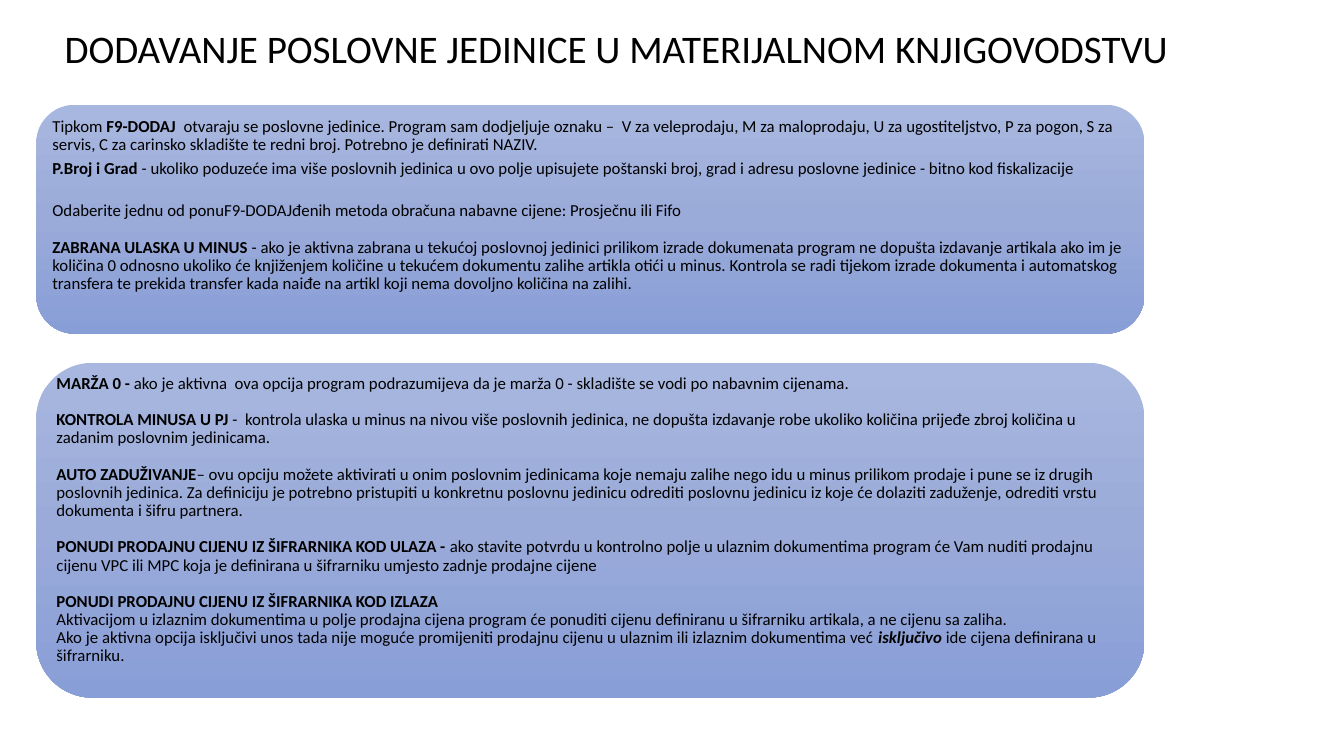
from copy import deepcopy
from dataclasses import dataclass

from pptx import Presentation
from pptx.dml.color import RGBColor
from pptx.enum.shapes import MSO_SHAPE as Shape
from pptx.enum.text import MSO_ANCHOR as Anchor, PP_ALIGN as Align
from pptx.oxml.ns import qn
from pptx.util import Inches, Pt

COLORS = {"text": "000000", "top": "A8B7DF", "middle": "9AABD9", "bottom": "889ED7"}
FONT = "Calibri"
TITLE = "DODAVANJE POSLOVNE JEDINICE U MATERIJALNOM KNJIGOVODSTVU"
PANEL_LEFT, PANEL_WIDTH = 0.36, 10.99
SMALL_GAP, LINE_GAP, WIDE_GAP = 4.2, 13, 17.2


@dataclass
class Run:
    text: str
    bold: bool = False
    italic: bool = False


@dataclass
class Entry:
    runs: list[Run]
    gap: float = 0


@dataclass
class Panel:
    top: float
    height: float
    text_box: tuple[float, float, float, float]
    inset: float
    entries: list[Entry]


def labelled(label: str, text: str, gap: float = 0) -> Entry:
    """Make an entry that opens with a bold label."""
    return Entry([Run(label, bold=True), Run(text)], gap)


PANELS = [
    Panel(1.04, 2.27, (0.47, 1.15, 10.76, 2.05), 0.05, [
        Entry([
            Run("Tipkom "),
            Run("F9-DODAJ ", bold=True),
            Run(" otvaraju se poslovne jedinice. Program sam dodjeljuje oznaku –  V za veleprodaju, "
                "M za maloprodaju, U za ugostiteljstvo, P za pogon, S za servis, C za carinsko "
                "skladište te redni broj. Potrebno je definirati NAZIV."),
        ]),
        labelled("P.Broj i Grad",
                 " - ukoliko poduzeće ima više poslovnih jedinica u ovo polje upisujete poštanski "
                 "broj, grad i adresu poslovne jedinice - bitno kod fiskalizacije", SMALL_GAP),
        Entry([Run("Odaberite jednu od ponuF9-DODAJđenih metoda obračuna nabavne cijene: "
                   "Prosječnu ili Fifo")], WIDE_GAP),
        labelled("ZABRANA ULASKA U MINUS",
                 " - ako je aktivna zabrana u tekućoj poslovnoj jedinici prilikom izrade dokumenata "
                 "program ne dopušta izdavanje artikala ako im je količina 0 odnosno ukoliko će "
                 "knjiženjem količine u tekućem dokumentu zalihe artikla otići u minus. Kontrola se "
                 "radi tijekom izrade dokumenta i automatskog transfera te prekida transfer kada "
                 "naiđe na artikl koji nema dovoljno količina na zalihi.", LINE_GAP),
    ]),
    Panel(3.6, 3.32, (0.52, 3.7, 10.66, 3.05), 0.04, [
        labelled("MARŽA 0 - ",
                 "ako je aktivna  ova opcija program podrazumijeva da je marža 0 - skladište se vodi "
                 "po nabavnim cijenama."),
        labelled("KONTROLA MINUSA U PJ",
                 " -  kontrola ulaska u minus na nivou više poslovnih jedinica, ne dopušta izdavanje "
                 "robe ukoliko količina prijeđe zbroj količina u zadanim poslovnim jedinicama.",
                 LINE_GAP),
        labelled("AUTO ZADUŽIVANJE",
                 "– ovu opciju možete aktivirati u onim poslovnim jedinicama koje nemaju zalihe nego "
                 "idu u minus prilikom prodaje i pune se iz drugih poslovnih jedinica. Za definiciju "
                 "je potrebno pristupiti u konkretnu poslovnu jedinicu odrediti poslovnu jedinicu iz "
                 "koje će dolaziti zaduženje, odrediti vrstu dokumenta i šifru partnera.", LINE_GAP),
        labelled("PONUDI PRODAJNU CIJENU IZ ŠIFRARNIKA KOD ULAZA - ",
                 "ako stavite potvrdu u kontrolno polje u ulaznim dokumentima program će Vam nuditi "
                 "prodajnu cijenu VPC ili MPC koja je definirana u šifrarniku umjesto zadnje "
                 "prodajne cijene", LINE_GAP),
        Entry([Run("PONUDI PRODAJNU CIJENU IZ ŠIFRARNIKA KOD IZLAZA", bold=True)], LINE_GAP),
        Entry([Run("Aktivacijom u izlaznim dokumentima u polje prodajna cijena program će ponuditi "
                   "cijenu definiranu u šifrarniku artikala, a ne cijenu sa zaliha.")]),
        Entry([
            Run("Ako je aktivna opcija isključivi unos tada nije moguće promijeniti prodajnu cijenu "
                "u ulaznim ili izlaznim dokumentima već "),
            Run("isključivo", bold=True, italic=True),
            Run(" ide cijena definirana u šifrarniku."),
        ]),
    ]),
]


def set_values(target: object, values: dict) -> None:
    """Set each named attribute on the target."""
    for name, value in values.items():
        setattr(target, name, value)


def place(shape, box: tuple[float, float, float, float]) -> None:
    """Move and size a shape in inches."""
    set_values(shape, dict(zip(("left", "top", "width", "height"), map(Inches, box))))


def write_entry(paragraph, entry: Entry, size: float) -> None:
    """Fill a paragraph with the formatted runs of an entry."""
    set_values(paragraph, {"alignment": Align.LEFT, "line_spacing": 0.9,
                           "space_before": Pt(entry.gap), "space_after": Pt(0)})
    for part in entry.runs:
        run = paragraph.add_run()
        run.text = part.text
        set_values(run.font, {"name": FONT, "size": Pt(size),
                              "bold": part.bold, "italic": part.italic})
        run.font.color.rgb = RGBColor.from_string(COLORS["text"])


def add_title(slide) -> None:
    """Format the title placeholder."""
    title = slide.shapes.title
    place(title, (0.54, 0.21, 11.64, 0.55))
    set_values(title.text_frame, {"vertical_anchor": Anchor.BOTTOM, "word_wrap": True})
    write_entry(title.text_frame.paragraphs[0], Entry([Run(TITLE)]), 27.9)


def fill_gradient(shape) -> None:
    """Give a shape the vertical three-stop blue gradient."""
    shape.fill.gradient()
    shape.fill.gradient_angle = 270
    stop_list = next(shape.element.iter(qn("a:gsLst")))
    stop_list.insert(1, deepcopy(stop_list[0]))
    for index, (stop, name) in enumerate(zip(shape.fill.gradient_stops, ("top", "middle", "bottom"))):
        stop.position = index / 2
        stop.color.rgb = RGBColor.from_string(COLORS[name])


def add_panel(slide, panel: Panel) -> None:
    """Draw a rounded panel and its text."""
    shape = slide.shapes.add_shape(Shape.ROUNDED_RECTANGLE, 0, 0, 0, 0)
    place(shape, (PANEL_LEFT, panel.top, PANEL_WIDTH, panel.height))
    shape.shadow.inherit = False
    shape.line.fill.background()
    fill_gradient(shape)

    frame = slide.shapes.add_textbox(*map(Inches, panel.text_box)).text_frame
    side = Inches(panel.inset)
    set_values(frame, {"word_wrap": True, "vertical_anchor": Anchor.TOP, "margin_left": side,
                       "margin_right": side, "margin_top": Inches(0.02), "margin_bottom": 0})
    for index, entry in enumerate(panel.entries):
        paragraph = frame.add_paragraph() if index else frame.paragraphs[0]
        write_entry(paragraph, entry, 12)


def main() -> None:
    """Build and save the slide."""
    presentation = Presentation()
    set_values(presentation, {"slide_width": Inches(13.33), "slide_height": Inches(7.5)})
    slide = presentation.slides.add_slide(presentation.slide_layouts[5])
    add_title(slide)
    for panel in PANELS:
        add_panel(slide, panel)
    presentation.save("out.pptx")


if __name__ == "__main__":
    main()
